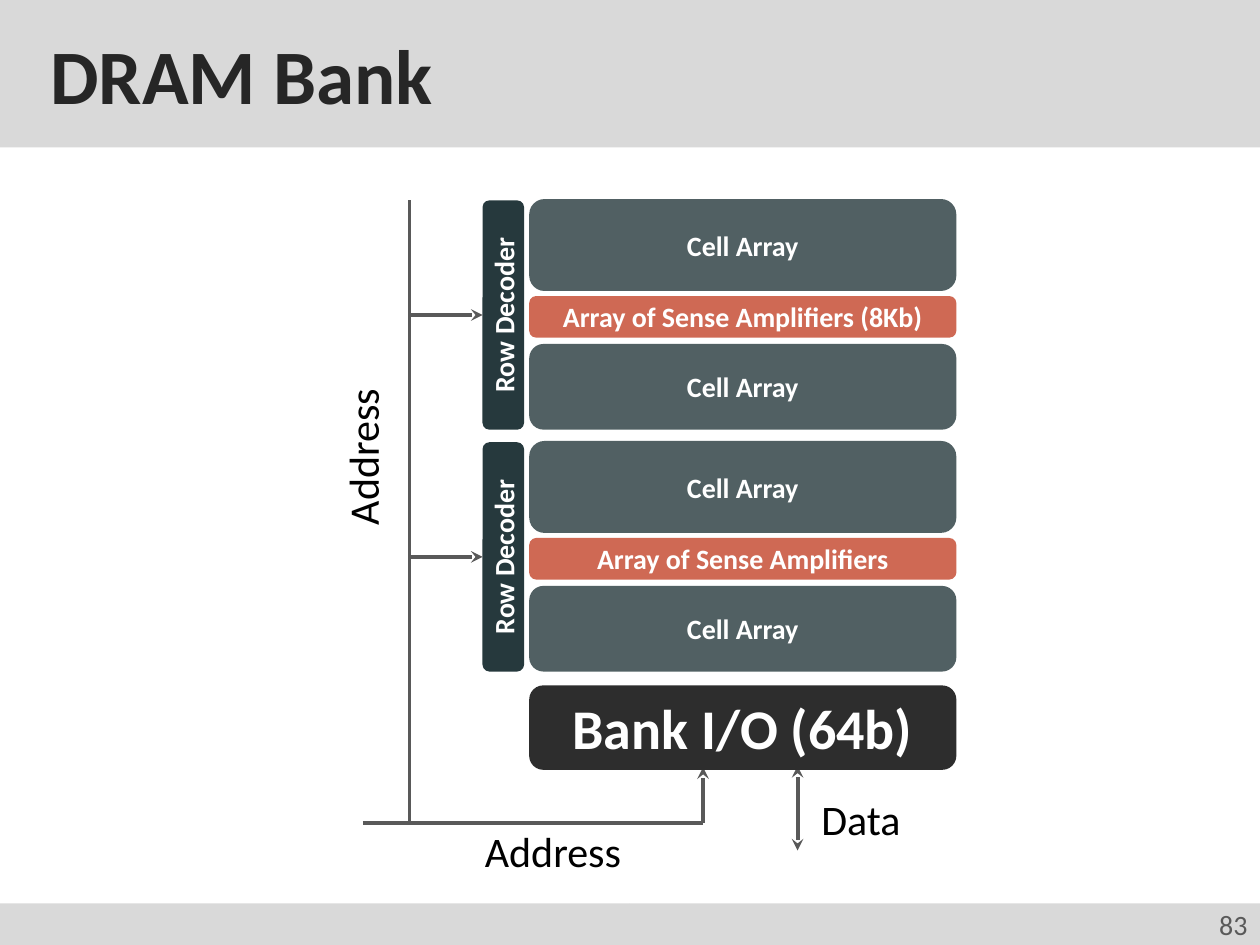
from dataclasses import dataclass

from lxml.etree import SubElement
from pptx import Presentation
from pptx.dml.color import RGBColor
from pptx.enum.shapes import MSO_CONNECTOR, MSO_SHAPE
from pptx.enum.text import MSO_ANCHOR, MSO_AUTO_SIZE, PP_ALIGN
from pptx.oxml.ns import qn
from pptx.util import Inches, Pt


@dataclass(frozen=True)
class Theme:
    font: str = "Calibri"
    band: str = "D9D9D9"
    title: str = "262626"
    line: str = "595959"
    label: str = "000000"
    on_dark: str = "FFFFFF"
    cell: str = "26393D"
    amplifier: str = "C4442A"
    bank_io: str = "2D2D2D"
    title_size: int = 44
    io_size: int = 32
    label_size: int = 24
    block_size: int = 16
    line_width: float = 2.25


class SlideBuilder:
    def __init__(self, page, theme):
        self.page = page
        self.theme = theme

    def set_text(self, shape, text, size, color, bold=False, align=PP_ALIGN.LEFT):
        frame = shape.text_frame
        frame.text = text
        para = frame.paragraphs[0]
        para.alignment = align
        font = para.runs[0].font
        font.name, font.size, font.bold = self.theme.font, Pt(size), bold
        font.color.rgb = RGBColor.from_string(color)
        return frame

    def paint(self, shape, color, opacity=100):
        shape.fill.solid()
        shape.fill.fore_color.rgb = RGBColor.from_string(color)
        shape.line.fill.background()
        if opacity < 100:
            fill = shape._element.spPr.find(qn("a:solidFill"))
            SubElement(fill.find(qn("a:srgbClr")), qn("a:alpha")).set(
                "val", str(opacity * 1000))

    def title(self, text, left, top, width, height):
        box = self.page.shapes.title
        box.left, box.top = Inches(left), Inches(top)
        box.width, box.height = Inches(width), Inches(height)
        self.paint(box, self.theme.band)
        frame = self.set_text(box, text, self.theme.title_size, self.theme.title, True)
        frame.margin_left = Inches(0.4)
        frame.vertical_anchor = MSO_ANCHOR.MIDDLE

    def band(self, left, top, width, height, text=None):
        box = self.page.shapes.add_shape(
            MSO_SHAPE.RECTANGLE, Inches(left), Inches(top), Inches(width), Inches(height))
        box.shadow.inherit = False
        self.paint(box, self.theme.band)
        if text:
            frame = self.set_text(box, text, self.theme.block_size, self.theme.line,
                                  align=PP_ALIGN.RIGHT)
            frame.vertical_anchor = MSO_ANCHOR.MIDDLE

    def block(self, text, left, top, width, height, color, opacity=100,
              size=None, upward=False, parent=None):
        box = (parent or self.page).shapes.add_shape(
            MSO_SHAPE.ROUNDED_RECTANGLE,
            Inches(left), Inches(top), Inches(width), Inches(height))
        box.shadow.inherit = False
        self.paint(box, color, opacity)
        frame = self.set_text(box, text, size or self.theme.block_size,
                              self.theme.on_dark, True, PP_ALIGN.CENTER)
        frame.vertical_anchor = MSO_ANCHOR.MIDDLE
        if upward:
            frame._txBody.find(qn("a:bodyPr")).set("vert", "vert270")
        return box

    def label(self, text, left, top, width, height, rotation=0):
        box = self.page.shapes.add_textbox(
            Inches(left), Inches(top), Inches(width), Inches(height))
        box.rotation = rotation
        frame = self.set_text(box, text, self.theme.label_size, self.theme.label)
        frame.word_wrap = False
        frame.auto_size = MSO_AUTO_SIZE.SHAPE_TO_FIT_TEXT

    def line(self, start, end, arrows=(), target=None):
        """Draw a line with "headEnd"/"tailEnd" arrows; target's left side holds its start."""
        link = self.page.shapes.add_connector(
            MSO_CONNECTOR.STRAIGHT, *(Inches(value) for value in (*start, *end)))
        if target is not None:
            link.begin_connect(target, 1)
        link.line.color.rgb = RGBColor.from_string(self.theme.line)
        link.line.width = Pt(self.theme.line_width)
        outline = link._element.spPr.find(qn("a:ln"))
        for arrow in arrows:
            SubElement(outline, qn("a:" + arrow)).set("type", "stealth")
        SubElement(link._element.spPr, qn("a:effectLst"))

    def subarray(self, top, amplifier_text):
        """Add two cell arrays around their amplifiers and return the row decoder."""
        group = self.page.shapes.add_group_shape()
        decoder = self.block("Row Decoder", 3.83, top + 0.01, 0.33, 1.82,
                             self.theme.cell, upward=True, parent=group)
        for text, offset, height, color in (
            (amplifier_text, 0.77, 0.33, self.theme.amplifier),
            ("Cell Array", 0, 0.73, self.theme.cell),
            ("Cell Array", 1.15, 0.68, self.theme.cell),
        ):
            self.block(text, ARRAY_LEFT, top + offset, ARRAY_WIDTH, height, color,
                       opacity=80, parent=group)
        return decoder


ARRAY_LEFT, ARRAY_WIDTH = 4.2, 3.39
BUS_X, BUS_Y, IO_ADDRESS_X, DATA_X = 3.25, 6.53, 5.58, 6.33


def main():
    deck = Presentation()
    deck.slide_width, deck.slide_height = Inches(10), Inches(7.5)
    theme = Theme()
    builder = SlideBuilder(deck.slides.add_slide(deck.slide_layouts[5]), theme)

    builder.title("DRAM Bank", 0, 0, 10, 1.17)
    builder.band(0, 7.17, 5, 0.33)
    builder.band(5, 7.17, 5, 0.33, "83")

    builder.line((IO_ADDRESS_X, 6.09), (IO_ADDRESS_X, BUS_Y), ["headEnd"])
    builder.line((DATA_X, 6.08), (DATA_X, 6.75), ["headEnd", "tailEnd"])
    builder.block("Bank I/O (64b)", ARRAY_LEFT, 5.44, ARRAY_WIDTH, 0.67,
                  theme.bank_io, size=theme.io_size)

    builder.line((BUS_X, 1.59), (BUS_X, BUS_Y))
    builder.line((2.88, BUS_Y), (IO_ADDRESS_X, BUS_Y))
    for top, text in ((1.58, "Array of Sense Amplifiers (8Kb)"),
                      (3.5, "Array of Sense Amplifiers")):
        decoder = builder.subarray(top, text)
        tap_y = top + 0.92
        builder.line((3.83, tap_y), (BUS_X, tap_y), ["headEnd"], decoder)

    builder.label("Address", 2.14, 3.28, 1.47, 0.5, rotation=270)
    builder.label("Address", 3.75, 6.5, 1.47, 0.5)
    builder.label("Data", 6.42, 6.25, 0.94, 0.5)
    deck.save("out.pptx")


if __name__ == "__main__":
    main()
